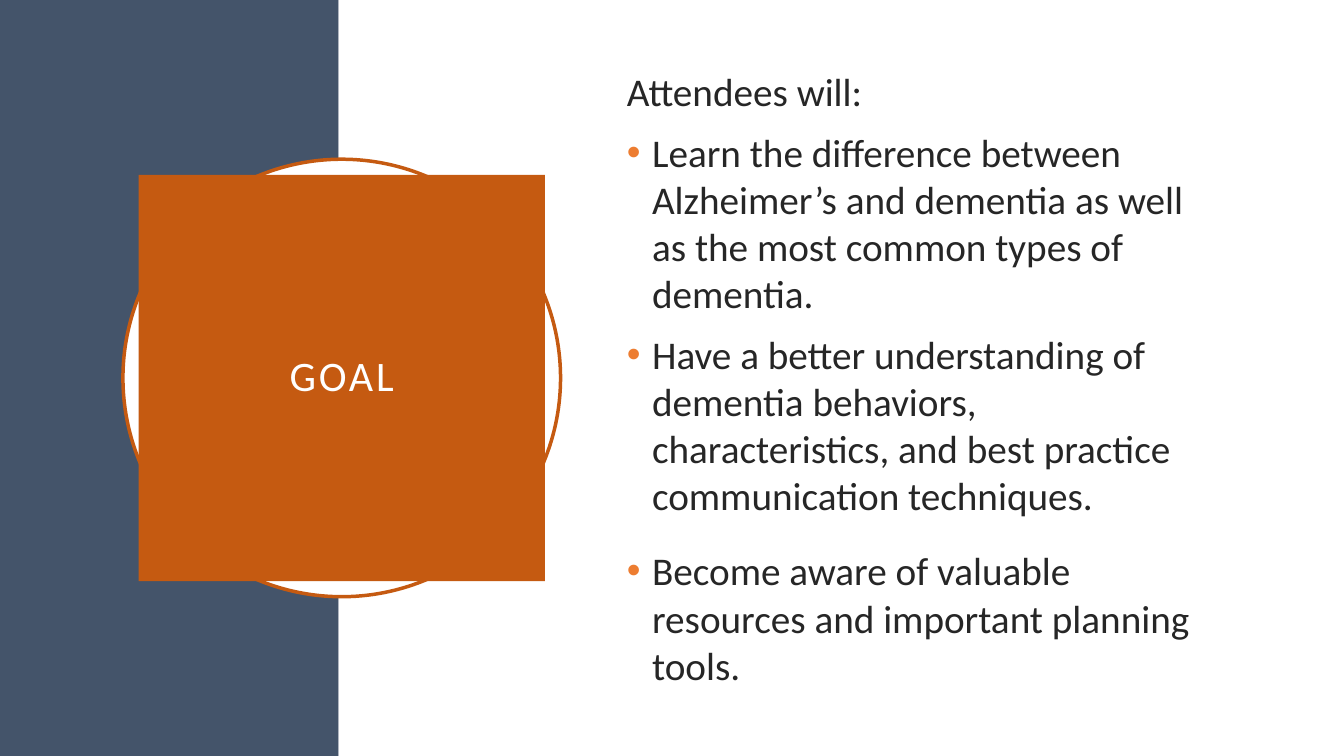
from dataclasses import dataclass

from lxml import etree
from pptx import Presentation
from pptx.dml.color import RGBColor
from pptx.enum.shapes import MSO_SHAPE
from pptx.enum.text import MSO_ANCHOR, MSO_AUTO_SIZE, PP_ALIGN
from pptx.oxml.ns import qn
from pptx.util import Inches, Pt

RECTANGLE, OVAL = MSO_SHAPE.RECTANGLE, MSO_SHAPE.OVAL
MIDDLE, CENTER, LEFT = MSO_ANCHOR.MIDDLE, PP_ALIGN.CENTER, PP_ALIGN.LEFT
NO_AUTOFIT = MSO_AUTO_SIZE.NONE

SLATE = RGBColor(0x44, 0x54, 0x6A)
WHITE = RGBColor(0xFF, 0xFF, 0xFF)
RUST = RGBColor(0xC5, 0x5A, 0x11)
ORANGE = RGBColor(0xED, 0x7D, 0x31)
INK = RGBColor(0x26, 0x26, 0x26)
FONT = "Calibri"

# Grid of 100 columns by 100 rows
WIDTH, HEIGHT = Inches(13.33), Inches(7.5)
COLUMN, ROW = WIDTH / 100, HEIGHT / 100
PANEL_COLUMNS = 25.2
GOAL_CENTER = (25.43, 50)
RING_ROWS, GOAL_ROWS = 57.87, 53.73


@dataclass(frozen=True)
class Box:
    left: int
    top: int
    width: int
    height: int


@dataclass(frozen=True)
class Objective:
    text: str
    bulleted: bool = True
    before: int = 0
    after: int = 10


OBJECTIVES = [
    Objective("Attendees will:", bulleted=False),
    Objective("Learn the difference between Alzheimer’s and dementia as well "
              "as the most common types of dementia."),
    Objective("Have a better understanding of dementia behaviors, "
              "characteristics, and best practice communication techniques."),
    Objective("Become aware of valuable resources and important planning tools.",
              before=10, after=0),
]


def grid_box(column: float, row: float, columns: float, rows: float) -> Box:
    return Box(round(column * COLUMN), round(row * ROW),
               round(columns * COLUMN), round(rows * ROW))


def centered_square(rows: float) -> Box:
    side = rows * ROW
    column, row = GOAL_CENTER
    return Box(round(column * COLUMN - side / 2), round(row * ROW - side / 2),
               round(side), round(side))


def add_figure(slide, kind, box: Box, fill: RGBColor, outline=None) -> None:
    figure = slide.shapes.add_shape(kind, box.left, box.top, box.width, box.height)
    figure.shadow.inherit = False
    figure.fill.solid()
    figure.fill.fore_color.rgb = fill
    if outline is None:
        figure.line.fill.background()
    else:
        figure.line.color.rgb = outline
        figure.line.width = Pt(2.5)


def add_goal(slide, box: Box) -> None:
    goal = slide.shapes.title
    goal.left, goal.top, goal.width, goal.height = box.left, box.top, box.width, box.height
    goal.fill.solid()
    goal.fill.fore_color.rgb = RUST
    frame = goal.text_frame
    frame.text = "GOAL"
    frame.auto_size = NO_AUTOFIT
    frame.vertical_anchor = MIDDLE
    frame.margin_left = frame.margin_right = Inches(0.2)
    frame.margin_top = frame.margin_bottom = Inches(0.2)
    heading = frame.paragraphs[0]
    heading.alignment = CENTER
    heading.line_spacing = 0.9
    set_font(heading, 30, WHITE)
    heading.runs[0].font._element.set("spc", "200")
    # Bring the title in front of the ring
    slide.shapes._spTree.append(goal._element)


def set_font(paragraph, size: int, color: RGBColor) -> None:
    paragraph.font.name = FONT
    paragraph.font.size = Pt(size)
    paragraph.font.color.rgb = color


def add_bullet(paragraph) -> None:
    properties = paragraph._p.get_or_add_pPr()
    indent = Inches(0.25)
    properties.set("marL", str(indent))
    properties.set("indent", str(-indent))
    bullet_color = etree.Element(qn("a:buClr"))
    etree.SubElement(bullet_color, qn("a:srgbClr"), val=str(ORANGE))
    bullet_font = etree.Element(qn("a:buFont"), typeface="Arial")
    bullet = etree.Element(qn("a:buChar"), char="•")
    # Bullet settings come before the default run properties
    run_defaults = properties.find(qn("a:defRPr"))
    for setting in (bullet_color, bullet_font, bullet):
        run_defaults.addprevious(setting)


def add_objectives(slide, box: Box) -> None:
    body = slide.shapes.add_textbox(box.left, box.top, box.width, box.height)
    frame = body.text_frame
    frame.word_wrap = True
    frame.vertical_anchor = MIDDLE
    for index, objective in enumerate(OBJECTIVES):
        paragraph = frame.add_paragraph() if index else frame.paragraphs[0]
        paragraph.text = objective.text
        paragraph.alignment = LEFT
        paragraph.space_before = Pt(objective.before)
        paragraph.space_after = Pt(objective.after)
        set_font(paragraph, 28, INK)
        if objective.bulleted:
            add_bullet(paragraph)


def main() -> None:
    presentation = Presentation()
    presentation.slide_width, presentation.slide_height = WIDTH, HEIGHT
    title_only = presentation.slide_layouts[5]
    slide = presentation.slides.add_slide(title_only)

    # Background panels
    add_figure(slide, RECTANGLE, grid_box(0, 0, PANEL_COLUMNS, 100), SLATE)
    add_figure(slide, RECTANGLE,
               grid_box(PANEL_COLUMNS, 0, 100 - PANEL_COLUMNS, 100), WHITE)

    # Goal over its ring
    add_figure(slide, OVAL, centered_square(RING_ROWS), WHITE, RUST)
    add_goal(slide, centered_square(GOAL_ROWS))

    # Learning objectives
    add_objectives(slide, grid_box(45.91, 20.4, 43.66, 59.07))

    presentation.save("out.pptx")


if __name__ == "__main__":
    main()
